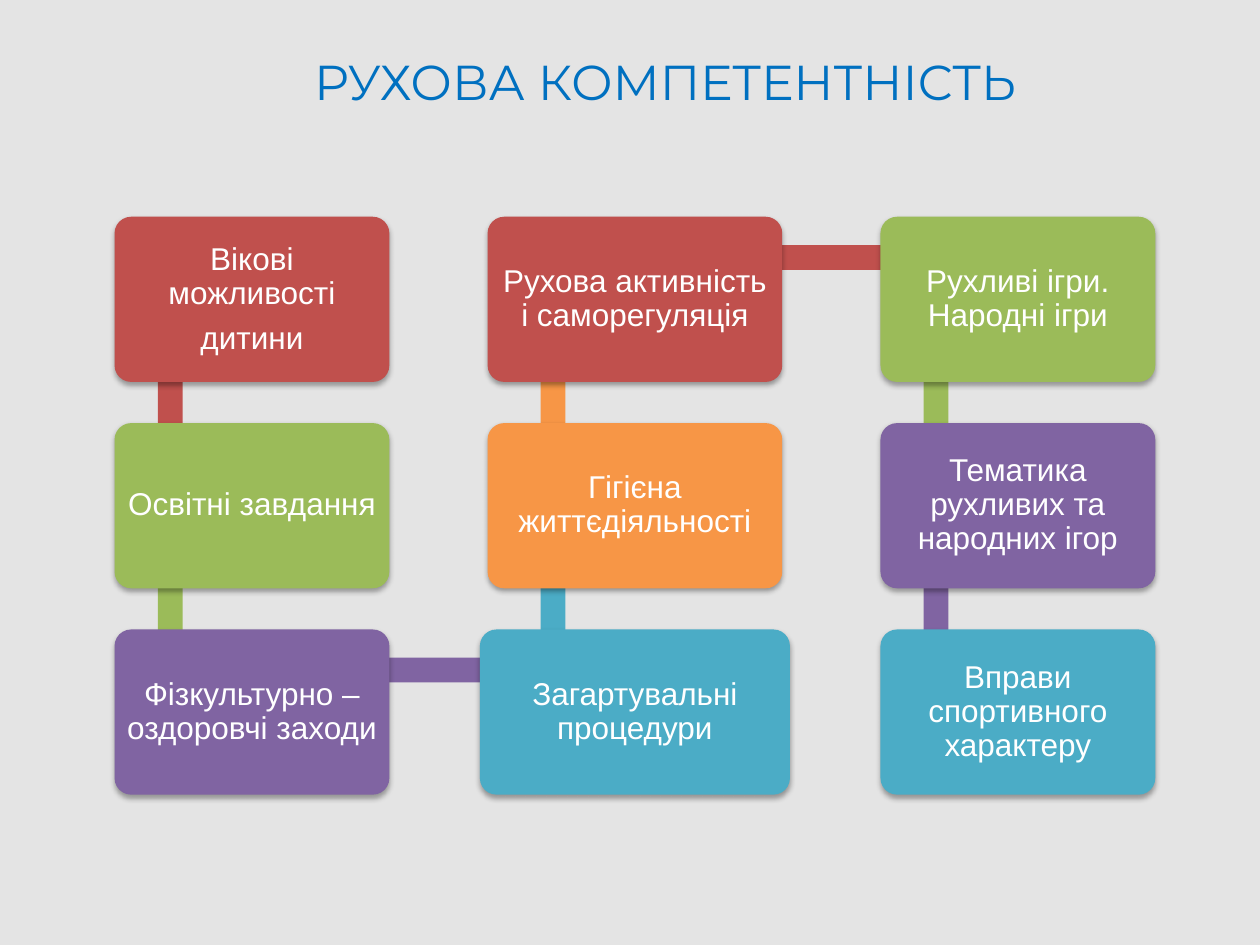
from dataclasses import dataclass
from itertools import cycle

from lxml import etree
from pptx import Presentation
from pptx import util as u
from pptx.dml.color import RGBColor
from pptx.enum import shapes, text
from pptx.oxml import ns


@dataclass(frozen=True)
class Theme:
    back: str = "E4E4E4"
    title: str = "0070C0"
    label: str = "FFFFFF"
    steps: tuple = ("C0504D", "9BBB59", "8064A2", "4BACC6", "F79646")
    head_font: str = "Montserrat"
    body_font: str = "Arial"
    head_size: int = 28
    body_size: int = 18


THEME = Theme()

# Steps along the path: column, row, width, way to the next step, text
STEPS = [
    (0, 0, 5.54, "down", "Вікові можливості\nдитини"),
    (0, 1, 5.54, "down", "Освітні завдання"),
    (0, 2, 5.54, "right", "Фізкультурно – оздоровчі заходи"),
    (1, 2, 6.25, "up", "Загартувальні процедури"),
    (1, 1, 5.94, "up", "Гігієна життєдіяльності"),
    (1, 0, 5.94, "right", "Рухова активність і саморегуляція"),
    (2, 0, 5.54, "down", "Рухливі ігри. Народні ігри"),
    (2, 1, 5.54, "down", "Тематика рухливих та народних ігор"),
    (2, 2, 5.54, None, "Вправи спортивного характеру"),
]


def color(code):
    return RGBColor.from_string(code)


def style(para, font, size, code):
    para.alignment = text.PP_ALIGN.CENTER
    for run in para.runs:
        run.font.name = font
        run.font.size = u.Pt(size)
        run.font.color.rgb = color(code)


def block(group, kind, left, top, width, height, code):
    shape = group.shapes.add_shape(
        kind, u.Cm(left), u.Cm(top), u.Cm(width), u.Cm(height))
    shape.shadow.inherit = False
    shape.fill.solid()
    shape.fill.fore_color.rgb = color(code)
    shape.line.fill.background()
    return shape


def shade(shape):
    """Add a soft shadow straight below the shape."""
    effects = shape._element.spPr.find(ns.qn("a:effectLst"))
    outer = etree.SubElement(
        effects, ns.qn("a:outerShdw"), blurRad=str(u.Pt(3.1)),
        dist=str(u.Pt(1.8)), dir="5400000", rotWithShape="0")
    black = etree.SubElement(outer, ns.qn("a:srgbClr"), val="000000")
    etree.SubElement(black, ns.qn("a:alpha"), val="35000")


def title(slide, left, top, width, height):
    box = slide.shapes.add_textbox(
        u.Cm(left), u.Cm(top), u.Cm(width), u.Cm(height))
    frame = box.text_frame
    frame.word_wrap = True
    frame.auto_size = text.MSO_AUTO_SIZE.SHAPE_TO_FIT_TEXT
    frame.text = "РУХОВА КОМПЕТЕНТНІСТЬ"
    style(frame.paragraphs[0], THEME.head_font, THEME.head_size, THEME.title)


def link(group, way, mid, top, pitch, code):
    """Draw the bar that leads from one step to the next."""
    thick, shift = 0.5, 1.65
    if way == "right":
        block(group, shapes.MSO_SHAPE.RECTANGLE,
              mid - shift, top + 0.57, 7.7, thick, code)
        return
    long = pitch - 0.02
    upper = top if way == "down" else top - pitch
    bar = block(group, shapes.MSO_SHAPE.RECTANGLE, mid - shift - long / 2,
                upper + 2.92 - thick / 2, long, thick, code)
    bar.rotation = 90 if way == "down" else 270


def card(group, mid, top, width, height, words, code):
    shape = block(group, shapes.MSO_SHAPE.ROUNDED_RECTANGLE,
                  mid - width / 2, top, width, height, code)
    shape.adjustments[0] = 0.1
    shade(shape)
    frame = shape.text_frame
    frame.word_wrap = True
    frame.vertical_anchor = text.MSO_ANCHOR.MIDDLE
    frame.margin_left = frame.margin_right = u.Cm(0.08)
    frame.margin_top = frame.margin_bottom = u.Cm(0.08)
    frame.text = words
    for para in frame.paragraphs:
        para.line_spacing = 0.9
        para.space_after = u.Pt(6.3)
        style(para, THEME.body_font, THEME.body_size, THEME.label)


def path_map(slide, left, top, width, height):
    group = slide.shapes.add_group_shape()
    edge, tall = 5.54, 3.33
    across = (width - edge) / 2
    down = (height - tall) / 2
    for (col, row, wide, way, words), code in zip(STEPS, cycle(THEME.steps)):
        mid = left + edge / 2 + col * across
        head = top + row * down
        if way:
            link(group, way, mid, head, down, code)
        card(group, mid, head, wide, tall, words, code)


def main():
    deck = Presentation()
    deck.slide_width, deck.slide_height = u.Cm(25.4), u.Cm(19.05)
    slide = deck.slides.add_slide(deck.slide_layouts[6])
    fill = slide.background.fill
    fill.solid()
    fill.fore_color.rgb = color(THEME.back)

    title(slide, 5.1, 0.91, 16.61, 1.45)
    path_map(slide, 2.31, 4.37, 20.98, 11.65)
    deck.save("out.pptx")


if __name__ == "__main__":
    main()
